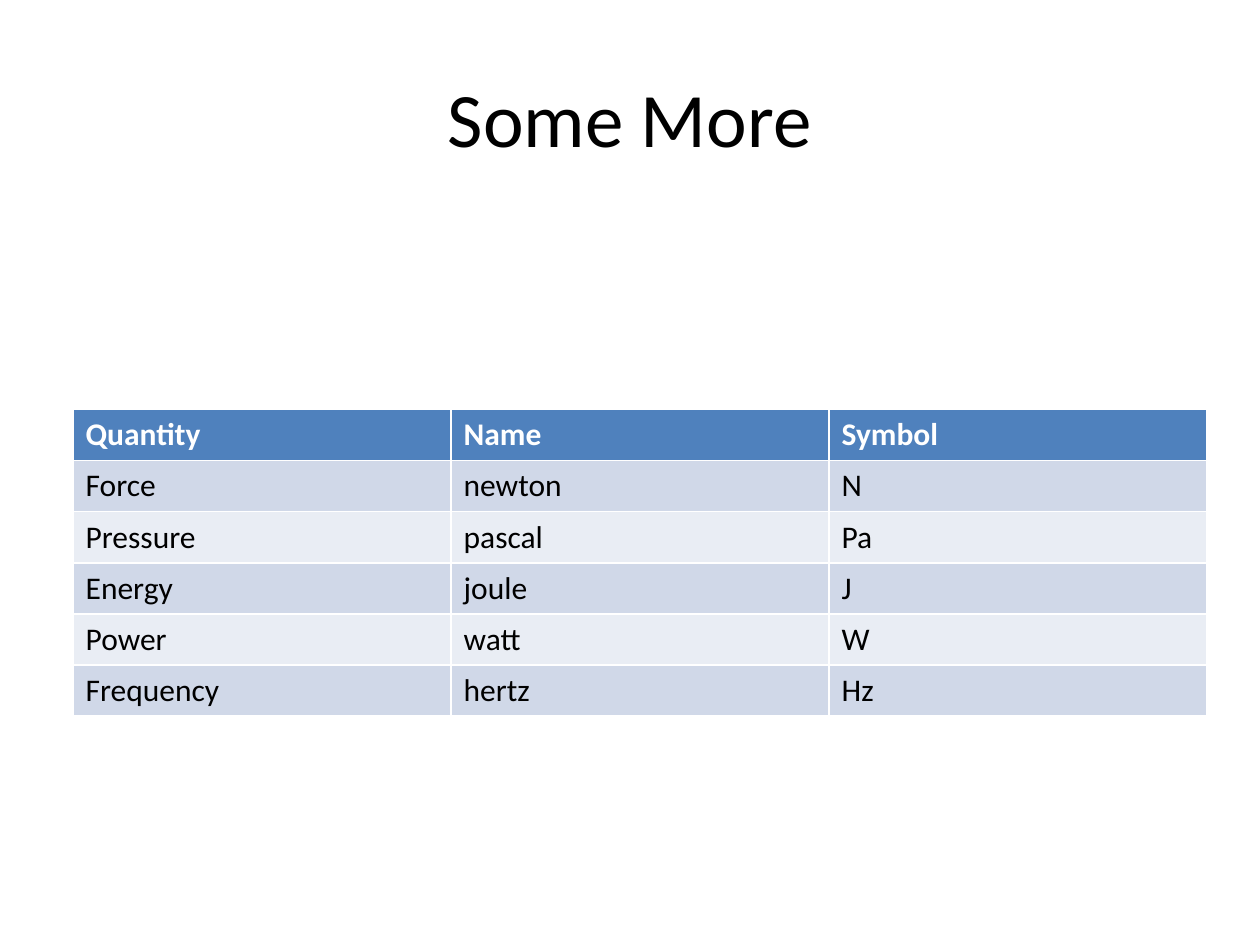
import pptx
import pptx.util
import pptx.dml.color
import pptx.enum.text

Inches = pptx.util.Inches


def color(value):
    return pptx.dml.color.RGBColor.from_string(value)


def format_font(paragraph, size, value, bold=False):
    paragraph.font.name = "Calibri"
    paragraph.font.size = pptx.util.Pt(size)
    paragraph.font.bold = bold
    paragraph.font.color.rgb = color(value)


presentation = pptx.Presentation()
presentation.slide_width = Inches(10)
presentation.slide_height = Inches(7.5)
slide = presentation.slides.add_slide(presentation.slide_layouts[5])

title = slide.shapes.title
title.left, title.top = Inches(0.5), Inches(0.3)
title.width, title.height = Inches(9), Inches(1.25)
title.text_frame.text = "Some More"
title.text_frame.vertical_anchor = pptx.enum.text.MSO_ANCHOR.MIDDLE
title_paragraph = title.text_frame.paragraphs[0]
title_paragraph.alignment = pptx.enum.text.PP_ALIGN.CENTER
format_font(title_paragraph, 44, "000000")

units = [
    ("Quantity", "Name", "Symbol"),
    ("Force", "newton", "N"),
    ("Pressure", "pascal", "Pa"),
    ("Energy", "joule", "J"),
    ("Power", "watt", "W"),
    ("Frequency", "hertz", "Hz"),
]
row_height = 0.405
table = slide.shapes.add_table(
    len(units), 3, Inches(0.58), Inches(3.25), Inches(9), Inches(row_height * len(units))
).table

for row_index, unit in enumerate(units):
    is_header = row_index == 0
    band = "D0D8E8" if row_index % 2 else "E9EDF4"
    for column_index, text in enumerate(unit):
        cell = table.cell(row_index, column_index)
        cell.text = text
        cell.fill.solid()
        cell.fill.fore_color.rgb = color("4F81BD" if is_header else band)
        format_font(
            cell.text_frame.paragraphs[0], 18, "FFFFFF" if is_header else "000000", is_header
        )

presentation.save("out.pptx")
